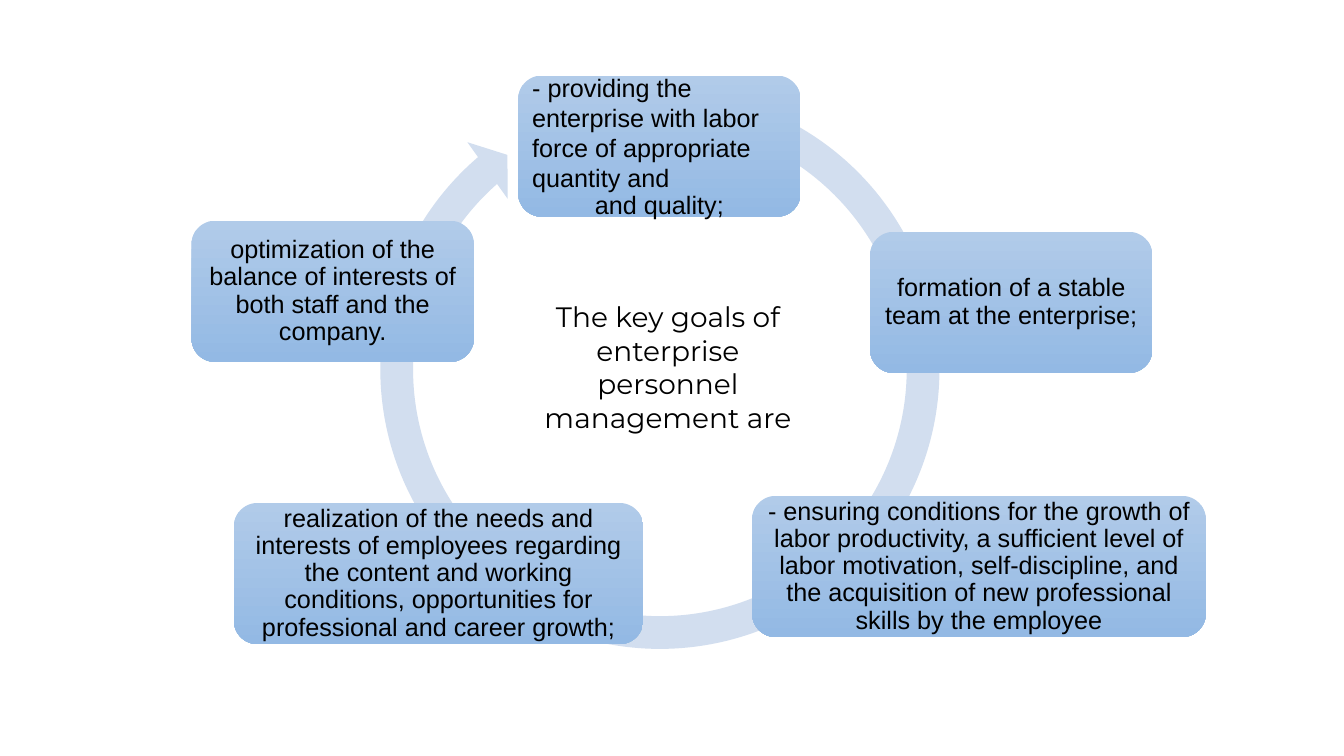
from pptx import Presentation
from pptx.dml.color import RGBColor
from pptx.enum.shapes import MSO_SHAPE
from pptx.enum.text import MSO_ANCHOR, MSO_AUTO_SIZE, PP_ALIGN
from pptx.util import Inches, Pt

SLIDE_W, SLIDE_H = 13.33, 7.5
CARD_H = 1.4
CARD_W = 2.8

# left, top, width, paragraphs as (text, alignment, line spacing)
GOALS = [
    (5.14, 0.75, CARD_W, [
        ("- providing the enterprise with labor force of appropriate quantity and",
         PP_ALIGN.LEFT, 1.0),
        ("and quality;", PP_ALIGN.CENTER, 0.9)]),
    (7.46, 4.92, 4.5, [
        ("- ensuring conditions for the growth of labor productivity, a sufficient "
         "level of labor motivation, self-discipline, and the acquisition of new "
         "professional skills by the employee", PP_ALIGN.CENTER, 0.9)]),
    (8.63, 2.3, CARD_W, [
        ("formation of a stable team at the enterprise;", PP_ALIGN.CENTER, 0.9)]),
    (2.32, 4.99, 4.06, [
        ("realization of the needs and interests of employees regarding the content "
         "and working conditions, opportunities for professional and career growth;",
         PP_ALIGN.CENTER, 0.9)]),
    (1.9, 2.19, CARD_W, [
        ("optimization of the balance of interests of both staff and the company.",
         PP_ALIGN.CENTER, 0.9)]),
]


def rgb(value):
    return RGBColor.from_string(value)


def set_font(p, name, size):
    for r in p.runs:
        r.font.name = name
        r.font.size = Pt(size)
        r.font.color.rgb = rgb("000000")


def add_shape(s, kind, box):
    sp = s.shapes.add_shape(kind, *map(Inches, box))
    sp.shadow.inherit = False
    sp.line.fill.background()
    return sp


def add_cycle_arrow(s, box):
    sp = add_shape(s, MSO_SHAPE.CIRCULAR_ARROW, box)
    sp.fill.solid()
    sp.fill.fore_color.rgb = rgb("D2DEEF")
    head, end, start = (degrees * 0.6 for degrees in (5.51, 229.09, 290.07))
    band = 0.325 / box[2]
    for i, value in enumerate((band, head, end, start, band * 1.06)):
        sp.adjustments[i] = value


def add_goal(s, box, paragraphs):
    sp = add_shape(s, MSO_SHAPE.ROUNDED_RECTANGLE, box)
    sp.fill.gradient()
    sp.fill.gradient_angle = 270
    for stop, color in zip(sp.fill.gradient_stops, ("B1CBE9", "93B9E4")):
        stop.color.rgb = rgb(color)
    sp.fill.gradient_stops[0].position = 0
    sp.fill.gradient_stops[1].position = 1

    tf = sp.text_frame
    tf.word_wrap = True
    tf.vertical_anchor = MSO_ANCHOR.MIDDLE
    tf.margin_left = tf.margin_right = tf.margin_top = tf.margin_bottom = Inches(0.07)
    for i, (text, alignment, spacing) in enumerate(paragraphs):
        p = tf.add_paragraph() if i else tf.paragraphs[0]
        p.text = text
        p.alignment = alignment
        p.line_spacing = spacing
        set_font(p, "Arial", 18)


def place_title(s, box, text):
    title = s.shapes.title
    title.left, title.top, title.width, title.height = map(Inches, box)
    tf = title.text_frame
    tf.text = text
    tf.word_wrap = True
    tf.auto_size = MSO_AUTO_SIZE.SHAPE_TO_FIT_TEXT
    tf.vertical_anchor = MSO_ANCHOR.TOP
    p = tf.paragraphs[0]
    p.alignment = PP_ALIGN.CENTER
    p.line_spacing = 1.0
    set_font(p, "Montserrat", 20)


def main():
    prs = Presentation()
    prs.slide_width, prs.slide_height = Inches(SLIDE_W), Inches(SLIDE_H)
    s = prs.slides.add_slide(prs.slide_layouts[5])
    add_cycle_arrow(s, (3.59, 0.71, 5.91, 5.91))
    for left, top, width, paragraphs in GOALS:
        add_goal(s, (left, top, width, CARD_H), paragraphs)
    place_title(s, (5.18, 2.92, 2.89, 1.45),
                "The key goals of enterprise personnel management are")
    prs.save("out.pptx")


if __name__ == "__main__":
    main()
